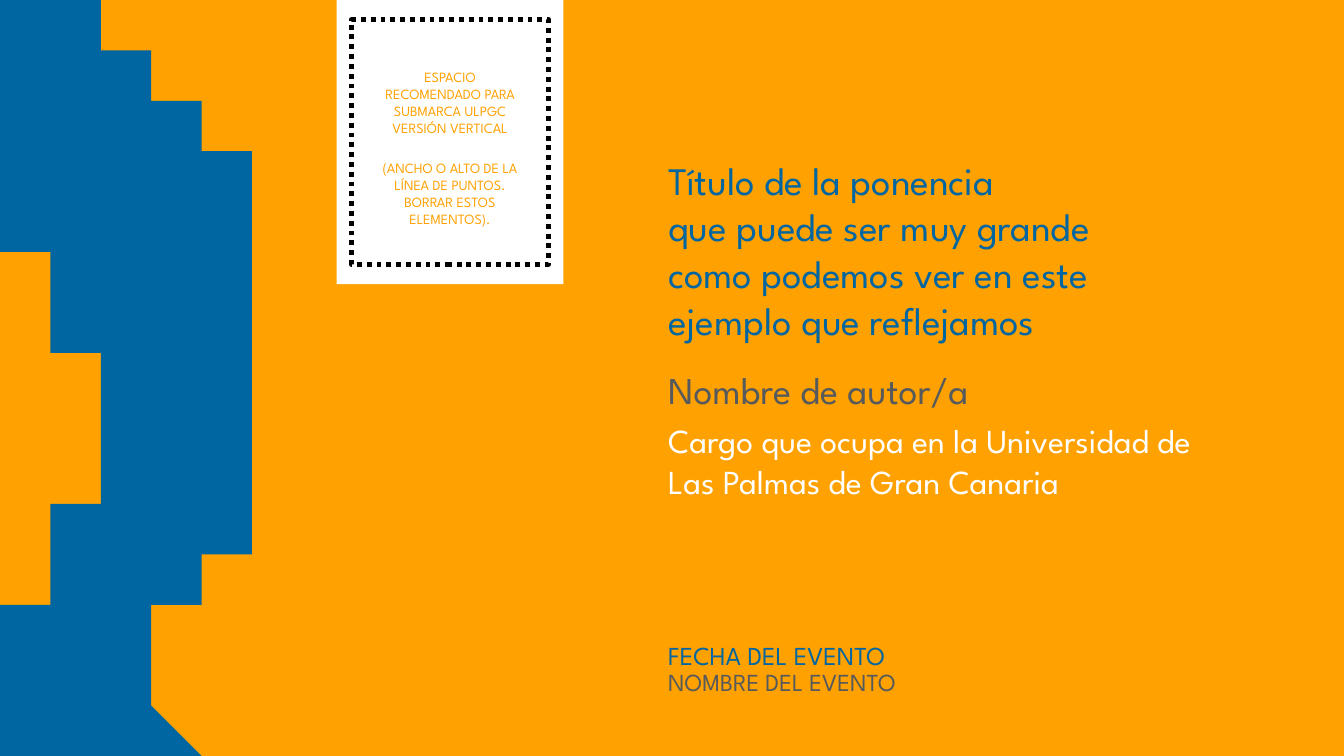
from dataclasses import dataclass

from pptx import Presentation
from pptx import util as u
from pptx.dml.color import RGBColor
from pptx.enum import dml, shapes, text


@dataclass(frozen=True)
class Theme:
    font: str = "League Spartan"
    orange: str = "FFA100"
    blue: str = "0066A1"
    grey: str = "565A5C"
    white: str = "FFFFFF"
    black: str = "000000"
    title: float = 55.6
    author: float = 54
    post: float = 48
    date: float = 37
    event: float = 35
    hint: float = 20.2


SKULL = [(-0.1, 0), (0.69, 0.15), (1.41, 0.37), (2.2, 0.75), (2.89, 1.23),
         (3.49, 1.8), (4, 2.46), (4.41, 3.19), (4.74, 3.98), (4.97, 4.83),
         (5.11, 5.71), (5.15, 6.64), (5.17, 7.5), (5.18, 8.28),
         (5.17, 9.33), (5.15, 11.27)]
NECK = [(3.62, 11.27), (3.54, 11.45), (3.43, 11.77), (3.33, 12.16),
        (3.25, 12.62), (3.22, 13.15), (3.26, 13.63), (3.36, 14.12),
        (3.54, 14.62), (3.83, 15.1)]
BASE = [(-0.1, 15.1), (-0.1, 12.45)]
CHIN = [(-0.1, 12.45), (0.27, 12.43), (0.63, 12.39), (1.04, 12.3)]
FACE = [(1.04, 12.3), (1.2, 11.58), (1.36, 10.75), (1.48, 9.97),
        (1.55, 9.1), (1.58, 8.33), (1.56, 7.56), (1.49, 6.94),
        (1.37, 6.35), (1.19, 5.85), (0.95, 5.4), (0.6, 4.98),
        (0.24, 4.69), (-0.1, 4.49)]


def smooth(knots, steps=8):
    ends = [knots[0], *knots, knots[-1]]
    curve = [knots[0]]
    for a, b, c, d in zip(ends, ends[1:], ends[2:], ends[3:]):
        for step in range(1, steps + 1):
            t = step / steps
            curve.append(tuple(
                q + t / 2 * (r - p + t * (2 * p - 5 * q + 4 * r - s
                                          + t * (3 * (q - r) + s - p)))
                for p, q, r, s in zip(a, b, c, d)))
    return curve


class Deck:
    def __init__(self, theme, slide):
        self.theme = theme
        self.slide = slide

    def paint(self, shape, fill=None, line=None, width=0):
        shape.shadow.inherit = False
        if fill:
            shape.fill.solid()
            shape.fill.fore_color.rgb = RGBColor.from_string(fill)
        else:
            shape.fill.background()
        if line:
            shape.line.color.rgb = RGBColor.from_string(line)
            shape.line.width = u.Pt(width)
            shape.line.dash_style = dml.MSO_LINE.ROUND_DOT
        else:
            shape.line.fill.background()

    def rect(self, box, **look):
        shape = self.slide.shapes.add_shape(
            shapes.MSO_SHAPE.RECTANGLE, *map(u.Inches, box))
        self.paint(shape, **look)

    def outline(self, points, fill):
        first, *rest = points
        pen = self.slide.shapes.build_freeform(*first, scale=u.Inches(1))
        pen.add_line_segments(rest, close=True)
        self.paint(pen.convert_to_shape(), fill=fill)

    def label(self, box, words, size, color, middle=True, grow=True,
              center=False, gap=0):
        frame = self.slide.shapes.add_textbox(
            *map(u.Inches, box)).text_frame
        frame.word_wrap = True
        frame.auto_size = (text.MSO_AUTO_SIZE.SHAPE_TO_FIT_TEXT if grow
                           else text.MSO_AUTO_SIZE.NONE)
        frame.vertical_anchor = (text.MSO_ANCHOR.MIDDLE if middle
                                 else text.MSO_ANCHOR.TOP)
        frame.margin_left = frame.margin_right = u.Inches(0.08)
        frame.margin_top = frame.margin_bottom = u.Inches(0.08)
        frame.text = words
        for rank, para in enumerate(frame.paragraphs):
            if center:
                para.alignment = text.PP_ALIGN.CENTER
            if rank and gap:
                para.space_before = u.Pt(gap)
            for run in para.runs:
                run.font.name = self.theme.font
                run.font.size = u.Pt(size)
                run.font.color.rgb = RGBColor.from_string(color)


def main():
    show = Presentation()
    show.slide_width, show.slide_height = u.Inches(26.67), u.Inches(15)
    theme = Theme()
    deck = Deck(theme, show.slides.add_slide(show.slide_layouts[6]))

    deck.rect((-0.11, 0, 26.79, 15.07), fill=theme.orange)
    deck.rect((6.68, -0.02, 4.5, 5.66), fill=theme.white)
    head = smooth(SKULL) + smooth(NECK) + BASE + smooth(CHIN) + smooth(FACE)
    deck.outline(head, theme.blue)

    left, wide = 13.18, 11.22
    deck.label((left, 7.21, wide, 1.05), "Nombre de autor/a",
               theme.author, theme.grey)
    deck.label((left, 8.26, wide, 2.53),
               "Cargo que ocupa en la Universidad de "
               "Las Palmas de Gran Canaria",
               theme.post, theme.white, middle=False)
    deck.label((left, 12.61, wide, 0.77), "FECHA DEL EVENTO",
               theme.date, theme.blue)
    deck.label((left, 13.15, wide, 0.74), "NOMBRE DEL EVENTO",
               theme.event, theme.grey)
    deck.label((left, 2.83, 11.9, 4.25),
               "Título de la ponencia\nque puede ser muy grande\n"
               "como podemos ver en este\nejemplo que reflejamos",
               theme.title, theme.blue, grow=False)

    deck.rect((6.97, 0.39, 3.92, 4.85), line=theme.black, width=7)
    deck.label((7.5, 1.04, 2.86, 3.8),
               "ESPACIO RECOMENDADO PARA SUBMARCA ULPGC VERSIÓN VERTICAL\n"
               "(ANCHO O ALTO DE LA LÍNEA DE PUNTOS. "
               "BORRAR ESTOS ELEMENTOS).",
               theme.hint, theme.orange, grow=False, center=True, gap=33)

    show.save("out.pptx")


if __name__ == "__main__":
    main()
